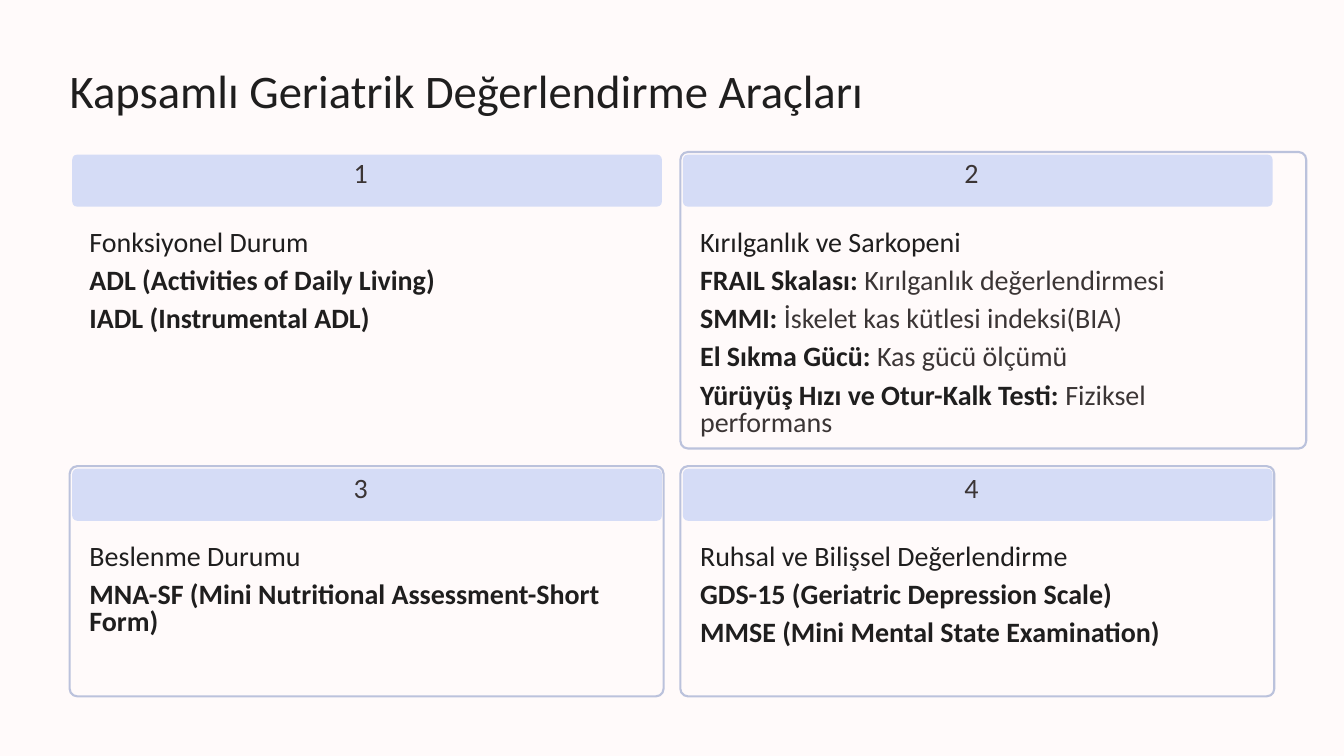
"""Builds a slide of four numbered cards listing geriatric assessment tools."""
from pptx import Presentation
from pptx.dml.color import RGBColor
from pptx.enum.shapes import MSO_SHAPE
from pptx.util import Inches, Pt

ROUNDED = MSO_SHAPE.ROUNDED_RECTANGLE
PAPER = RGBColor(0xFF, 0xFA, 0xFA)
BAND = RGBColor(0xD5, 0xDC, 0xF6)
BORDER = RGBColor(0xBB, 0xC2, 0xDC)
DARK = RGBColor(0x1F, 0x1E, 0x1E)
SOFT = RGBColor(0x3B, 0x35, 0x35)

COLS, ROWS = (0.83, 8.1), (1.81, 5.55)
LINE_STEP = 0.457
CARDS = [
    ("Fonksiyonel Durum", None,
     [("ADL (Activities of Daily Living)", ""), ("IADL (Instrumental ADL)", "")]),
    ("Kırılganlık ve Sarkopeni", (7.45, 3.53),
     [("FRAIL Skalası:", " Kırılganlık değerlendirmesi"),
      ("SMMI:", " İskelet kas kütlesi indeksi(BIA)"),
      ("El Sıkma Gücü:", " Kas gücü ölçümü"),
      ("Yürüyüş Hızı ve Otur-Kalk Testi:", " Fiziksel performans")]),
    ("Beslenme Durumu", (7.07, 2.74),
     [("MNA-SF (Mini Nutritional Assessment-Short Form)", "")]),
    ("Ruhsal ve Bilişsel Değerlendirme", (7.07, 2.74),
     [("GDS-15 (Geriatric Depression Scale)", ""),
      ("MMSE (Mini Mental State Examination)", "")]),
]

prs = Presentation()
prs.slide_width, prs.slide_height = Inches(16), Inches(9)
s = prs.slides.add_slide(prs.slide_layouts[6])
s.background.fill.solid()
s.background.fill.fore_color.rgb = PAPER


def add_text(x, y, w, h, runs, spacing, size=24, wrap=False):
    """Adds one paragraph of (text, colour, bold) runs."""
    tf = s.shapes.add_textbox(*map(Inches, (x, y, w, h))).text_frame
    frame = {"margin_left": 0, "margin_top": 0, "margin_right": 0,
             "margin_bottom": 0, "word_wrap": wrap}
    for name, value in frame.items():
        setattr(tf, name, value)
    p = tf.paragraphs[0]
    p.line_spacing = Pt(spacing)
    for text, color, bold in runs:
        r = p.add_run()
        r.text = text
        for name, value in {"name": "Calibri", "size": Pt(size), "bold": bold}.items():
            setattr(r.font, name, value)
        r.font.color.rgb = color


def add_box(x, y, w, h, radius, fill, line=None):
    """Adds a rounded box whose corner radius is given in inches."""
    sp = s.shapes.add_shape(ROUNDED, *map(Inches, (x, y, w, h)))
    sp.shadow.inherit = False
    sp.adjustments[0] = radius / min(w, h)
    sp.fill.solid()
    sp.fill.fore_color.rgb = fill
    if line is None:
        sp.line.fill.background()
    else:
        sp.line.color.rgb = line
        sp.line.width = Pt(1.8)


add_text(COLS[0], 0.72, 11.77, 0.68,
         [("Kapsamlı Geriatrik Değerlendirme Araçları", DARK, False)], 49, size=40)

for i, (heading, frame_size, tools) in enumerate(CARDS):
    x, y = COLS[i % 2], ROWS[i // 2]
    if frame_size:
        add_box(x, y, *frame_size, 0.09, PAPER, BORDER)
    add_box(x + 0.03, y + 0.03, 7.02, 0.62, 0.06, BAND)
    add_text(x + 3.38, y + 0.14, 0.31, 0.39, [(str(i + 1), SOFT, False)], 22)
    add_text(x + 0.235, y + 0.86, 5.43, 0.41, [(heading, DARK, False)], 29)
    for j, (tool, detail) in enumerate(tools):
        runs = [(tool, DARK, True)]
        if detail:
            runs.append((detail, SOFT, False))
        add_text(x + 0.235, y + 1.385 + j * LINE_STEP, 6.6, 0.33, runs, 23.5,
                 wrap=not detail)

prs.save("out.pptx")
